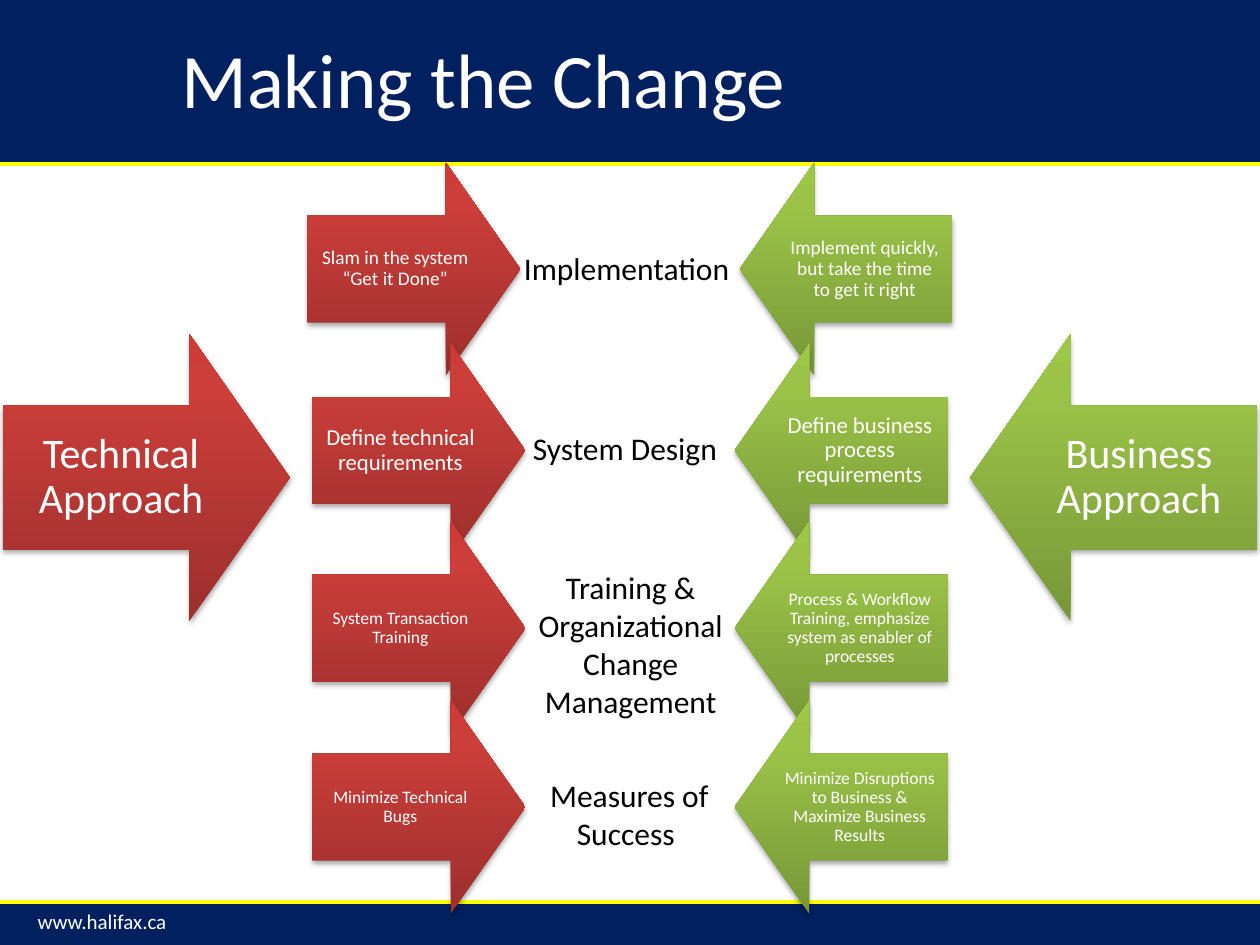
from pptx import Presentation
from pptx.dml.color import RGBColor
from pptx.enum.shapes import MSO_CONNECTOR, MSO_SHAPE
from pptx.enum.text import MSO_ANCHOR, PP_ALIGN
from pptx.oxml import parse_xml
from pptx.oxml.ns import nsdecls, qn
from pptx.util import Inches, Pt

FONT = "Calibri"
NAVY, YELLOW, WHITE, BLACK = "002060", "FFFF00", "FFFFFF", "000000"
WIDTH, HEIGHT = 10, 7.5
HEADER_BOTTOM, FOOTER_TOP = 1.3, 7.16

RED_STOPS = [(0, "9C2F2D"), (80, "CB3E3A"), (100, "CE3B37")]
GREEN_STOPS = [(0, "779737"), (80, "9BC348"), (100, "9DC746")]

# technical text, business text, left edge, top, side, text size, inset
ARROW_PAIRS = [
    ("Technical Approach", "Business Approach", 0.02, 2.65, 2.28, 24, 0.19),
    ("Slam in the system “Get it Done”",
     "Implement quickly, but take the time to get it right",
     2.44, 1.29, 1.69, 11, 0.09),
    ("Define technical requirements", "Define business process requirements",
     2.48, 2.73, 1.69, 13, 0.1),
    ("System Transaction Training",
     "Process & Workflow Training, emphasize system as enabler of processes",
     2.48, 4.14, 1.69, 10, 0.08),
    ("Minimize Technical Bugs",
     "Minimize Disruptions to Business & Maximize Business Results",
     2.48, 5.56, 1.69, 10, 0.08),
]

# text, left, top, width, height, alignment
STAGE_LABELS = [
    ("Implementation", 4.06, 1.93, 1.89, 0.4, PP_ALIGN.LEFT),
    ("System Design", 4.13, 3.36, 1.89, 0.4, PP_ALIGN.LEFT),
    ("Training &\vOrganizational Change Management",
     4.06, 4.46, 1.89, 1.31, PP_ALIGN.CENTER),
    ("Measures of\vSuccess ", 4.19, 6.11, 1.61, 0.71, PP_ALIGN.CENTER),
]


def color(value):
    return RGBColor.from_string(value)


def write(shape, text, size, ink, align=PP_ALIGN.LEFT, anchor=MSO_ANCHOR.TOP):
    frame = shape.text_frame
    frame.word_wrap = True
    frame.vertical_anchor = anchor
    frame.text = text
    para = frame.paragraphs[0]
    para.alignment = align
    for span in para.runs:
        span.font.name = FONT
        span.font.size = Pt(size)
        span.font.color.rgb = color(ink)
    return para


def add_label(page, text, left, top, width, height, size, ink, **layout):
    box = page.shapes.add_textbox(*map(Inches, (left, top, width, height)))
    write(box, text, size, ink, **layout)


def add_bar(page, top, height):
    bar = page.shapes.add_shape(
        MSO_SHAPE.RECTANGLE, 0, Inches(top), Inches(WIDTH), Inches(height))
    bar.shadow.inherit = False
    bar.fill.solid()
    bar.fill.fore_color.rgb = color(NAVY)
    bar.line.fill.background()


def add_rule(page, y):
    rule = page.shapes.add_connector(
        MSO_CONNECTOR.STRAIGHT, 0, Inches(y), Inches(WIDTH), Inches(y))
    rule.line.color.rgb = color(YELLOW)
    rule.line.width = Pt(2)
    rule._element.spPr.append(parse_xml(f"<a:effectLst {nsdecls('a')}/>"))


def shade(shape, stops):
    """Give the shape a bottom-to-top gradient and a soft shadow below."""
    shape.line.fill.background()
    shape.shadow.inherit = False
    properties = shape._element.spPr
    marks = "".join(f'<a:gs pos="{percent * 1000}"><a:srgbClr val="{value}"/></a:gs>'
                    for percent, value in stops)
    properties.find(qn("a:prstGeom")).addnext(parse_xml(
        f"<a:gradFill {nsdecls('a')}><a:gsLst>{marks}</a:gsLst>"
        '<a:lin ang="16200000" scaled="0"/></a:gradFill>'))
    properties.find(qn("a:effectLst")).append(parse_xml(
        f'<a:outerShdw {nsdecls("a")} blurRad="{Pt(3.1)}" dist="{Pt(1.8)}" '
        'dir="5400000" rotWithShape="0"><a:srgbClr val="000000">'
        '<a:alpha val="35000"/></a:srgbClr></a:outerShdw>'))


def add_arrow(page, kind, stops, text, left, top, side, size, inset):
    arrow = page.shapes.add_shape(kind, *map(Inches, (left, top, side, side)))
    arrow.adjustments[0] = 0.5
    arrow.adjustments[1] = 0.35
    shade(arrow, stops)
    para = write(arrow, text, size, WHITE, PP_ALIGN.CENTER, MSO_ANCHOR.MIDDLE)
    para.line_spacing = 0.9
    frame = arrow.text_frame
    frame.margin_left = frame.margin_right = Inches(inset)
    frame.margin_top = frame.margin_bottom = Inches(inset)


def main():
    deck = Presentation()
    deck.slide_width, deck.slide_height = Inches(WIDTH), Inches(HEIGHT)
    page = deck.slides.add_slide(deck.slide_layouts[6])

    add_bar(page, 0, HEADER_BOTTOM)
    add_bar(page, FOOTER_TOP, HEIGHT - FOOTER_TOP)
    add_label(page, "www.halifax.ca", 0.2, FOOTER_TOP, 1.59, 0.3, 12, WHITE)
    for y in (HEADER_BOTTOM, FOOTER_TOP):
        add_rule(page, y)
    add_label(page, "Making the Change", 1.34, 0.1, 8.01, 1.03, 44, WHITE,
              anchor=MSO_ANCHOR.MIDDLE)

    for technical, business, left, top, side, size, inset in ARROW_PAIRS:
        mirrored = WIDTH - left - side
        add_arrow(page, MSO_SHAPE.RIGHT_ARROW, RED_STOPS, technical,
                  left, top, side, size, inset)
        add_arrow(page, MSO_SHAPE.LEFT_ARROW, GREEN_STOPS, business,
                  mirrored, top, side, size, inset)

    for text, left, top, width, height, align in STAGE_LABELS:
        add_label(page, text, left, top, width, height, 18, BLACK, align=align)

    deck.save("out.pptx")


if __name__ == "__main__":
    main()
